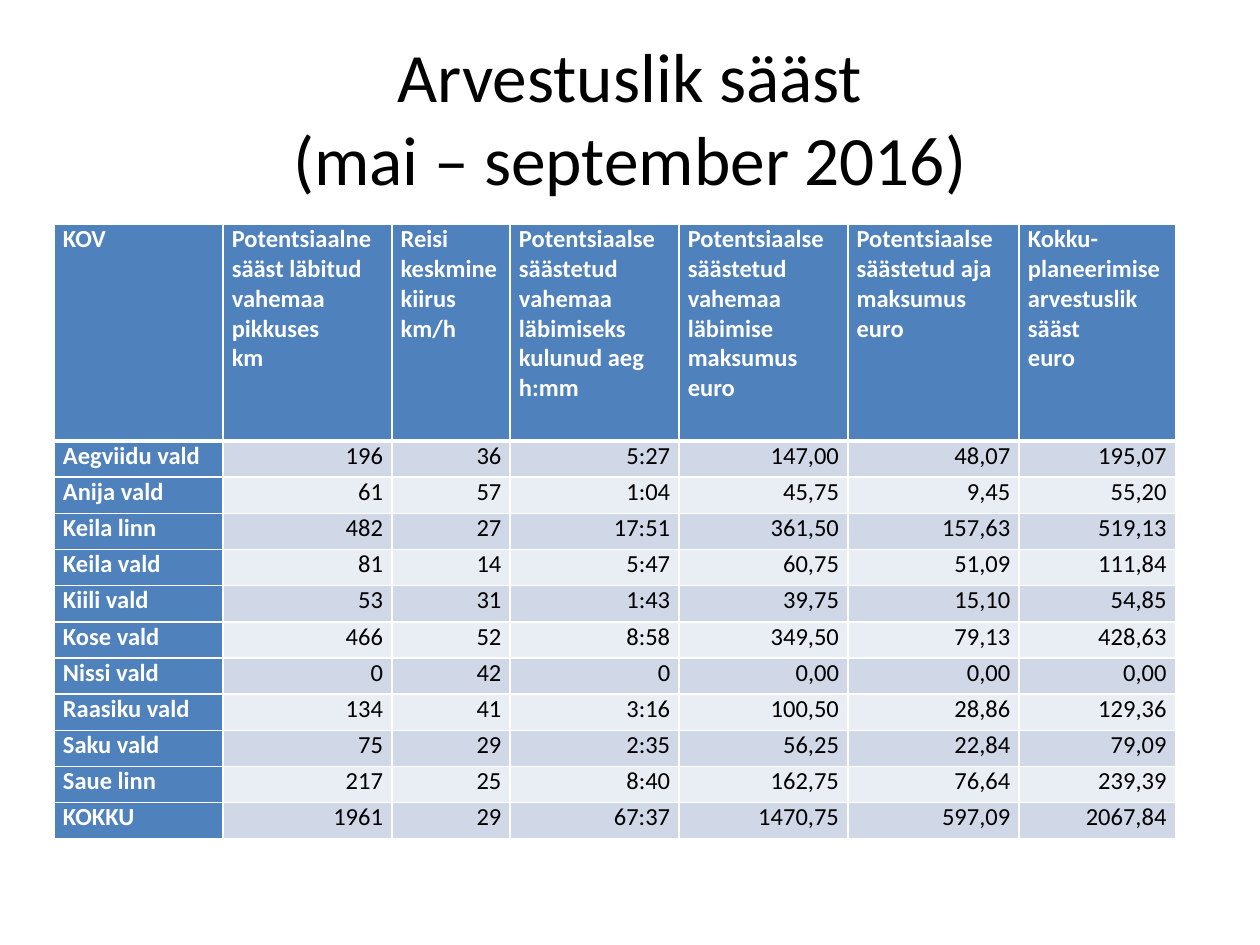
import lxml.etree
import pptx
import pptx.dml.color
import pptx.enum.text
import pptx.oxml.ns
import pptx.util

Inches, Pt = pptx.util.Inches, pptx.util.Pt
RGB = pptx.dml.color.RGBColor.from_string
Align = pptx.enum.text.PP_ALIGN
Anchor = pptx.enum.text.MSO_ANCHOR
qn = pptx.oxml.ns.qn

tint = {"head": "4F81BD", "odd": "D0D8E8", "even": "E9EDF4", "ink": "000000", "white": "FFFFFF"}
wide, high = 10, 7.5
cols = [1.34, 1.34, 0.94, 1.34, 1.34, 1.36, 1.24]
top, full = 1.72, 4.88

heads = [
    "KOV",
    "Potentsiaalne sääst läbitud vahemaa pikkuses\nkm",
    "Reisi keskmine kiirus \nkm/h",
    "Potentsiaalse säästetud vahemaa läbimiseks kulunud aeg\nh:mm",
    "Potentsiaalse säästetud vahemaa läbimise maksumus euro",
    "Potentsiaalse säästetud aja maksumus\neuro",
    "Kokku-planeerimise arvestuslik\nsääst\neuro",
]
body = [
    ["Aegviidu vald", "196", "36", "5:27", "147,00", "48,07", "195,07"],
    ["Anija vald", "61", "57", "1:04", "45,75", "9,45", "55,20"],
    ["Keila linn", "482", "27", "17:51", "361,50", "157,63", "519,13"],
    ["Keila vald", "81", "14", "5:47", "60,75", "51,09", "111,84"],
    ["Kiili vald", "53", "31", "1:43", "39,75", "15,10", "54,85"],
    ["Kose vald", "466", "52", "8:58", "349,50", "79,13", "428,63"],
    ["Nissi vald", "0", "42", "0", "0,00", "0,00", "0,00"],
    ["Raasiku vald", "134", "41", "3:16", "100,50", "28,86", "129,36"],
    ["Saku vald", "75", "29", "2:35", "56,25", "22,84", "79,09"],
    ["Saue linn", "217", "25", "8:40", "162,75", "76,64", "239,39"],
    ["KOKKU", "1961", "29", "67:37", "1470,75", "597,09", "2067,84"],
]


def style(frame, align, size, color, bold):
    for para in frame.paragraphs:
        para.alignment = align
        for run in para.runs:
            run.font.color.rgb = RGB(color)
            for key, val in {"name": "Calibri", "size": Pt(size), "bold": bold}.items():
                setattr(run.font, key, val)


def edge(cell, sides):
    props = cell._tc.get_or_add_tcPr()
    for spot, (side, width) in enumerate(sides.items()):
        line = lxml.etree.Element(qn("a:ln" + side), w=str(Pt(width)))
        paint = lxml.etree.SubElement(line, qn("a:solidFill"))
        lxml.etree.SubElement(paint, qn("a:srgbClr"), val=tint["white"])
        props.insert(spot, line)


deck = pptx.Presentation()
deck.slide_width, deck.slide_height = Inches(wide), Inches(high)
slide = deck.slides.add_slide(deck.slide_layouts[5])

title = slide.shapes.title
place = {"left": 0.05 * wide, "top": 0.04 * high, "width": 0.9 * wide, "height": high / 6}
for key, val in place.items():
    setattr(title, key, Inches(val))
frame = title.text_frame
frame.paragraphs[0].text = "Arvestuslik sääst\n(mai – september 2016)"
fit = {"word_wrap": True, "auto_size": pptx.enum.text.MSO_AUTO_SIZE.NONE, "vertical_anchor": Anchor.MIDDLE}
for key, val in fit.items():
    setattr(frame, key, val)
style(frame, Align.CENTER, 39.6, tint["ink"], False)

rows = [heads] + body
spot = [Inches(n) for n in (0.43, 1.78, sum(cols), full)]
table = slide.shapes.add_table(len(rows), len(cols), *spot).table
for col, width in zip(table.columns, cols):
    col.width = Inches(width)
for r, row in enumerate(rows):
    table.rows[r].height = Inches((full - top) / len(body) if r else top)
    for c, text in enumerate(row):
        cell = table.cell(r, c)
        head = r == 0 or c == 0
        cell.text = text
        pad = {"margin_left": 0.07, "margin_right": 0.07, "margin_top": 0, "margin_bottom": 0}
        for key, val in pad.items():
            setattr(cell, key, Inches(val))
        cell.vertical_anchor = Anchor.TOP
        cell.fill.solid()
        cell.fill.fore_color.rgb = RGB(tint["head" if head else "odd" if r % 2 else "even"])
        align = Align.JUSTIFY if (r, c) == (0, 2) else Align.LEFT if head else Align.RIGHT
        style(cell.text_frame, align, 14, tint["white" if head else "ink"], head)
        edge(cell, {"L": 1, "R": 1, "T": 3 if r == 1 else 1, "B": 1 if r else 3})

deck.save("out.pptx")
